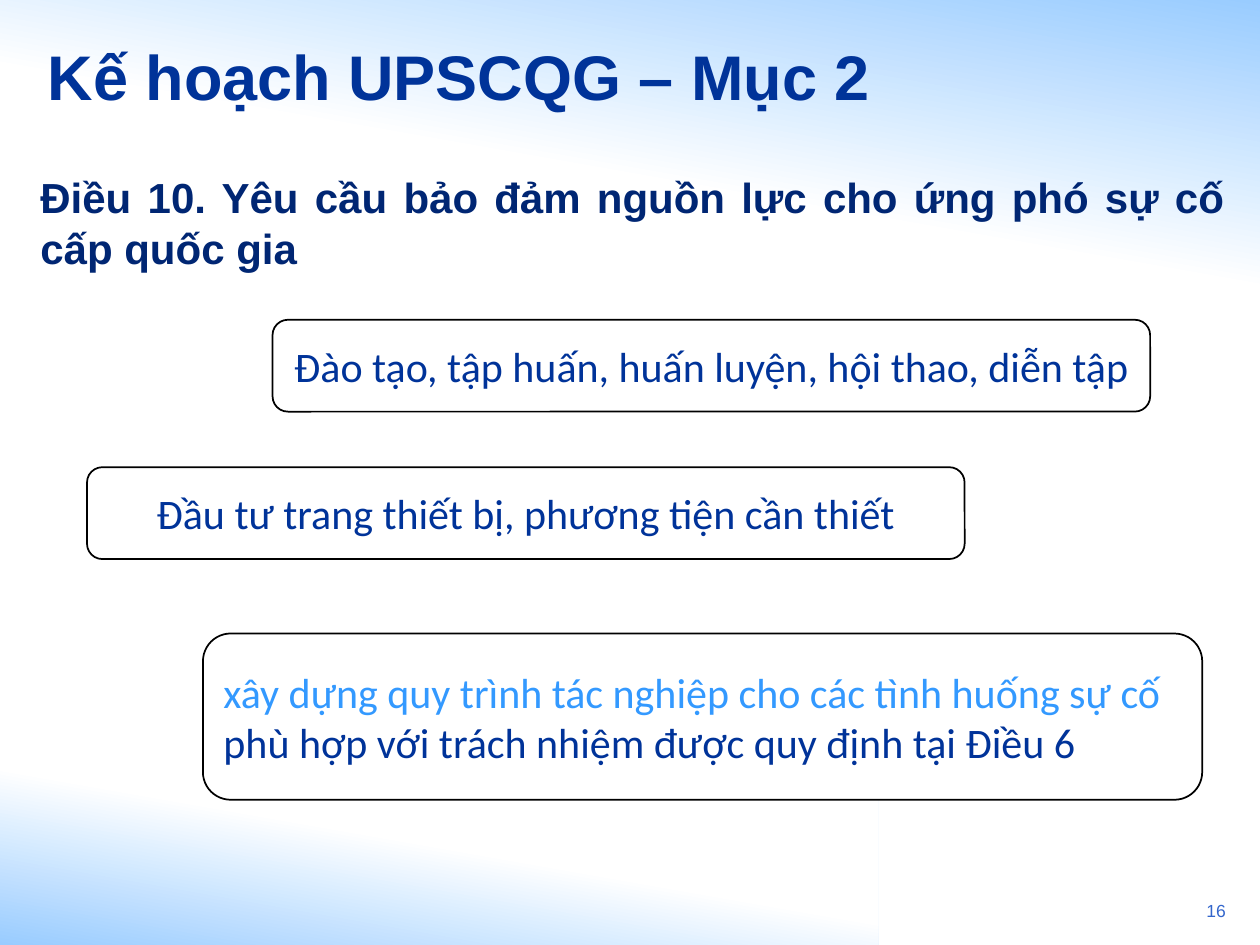
from pptx import Presentation
from pptx.dml.color import RGBColor
from pptx.enum.shapes import MSO_SHAPE
from pptx.enum.text import MSO_ANCHOR, PP_ALIGN
from pptx.util import Pt

COLORS = {
    "sky": "99CCFF", "white": "FFFFFF", "black": "000000", "title": "003399",
    "heading": "002673", "accent": "3399FF", "number": "3366CC",
}


def color(name):
    return RGBColor.from_string(COLORS[name])


def points(box):
    return [Pt(v) for v in box]


def add_run(p, text, size, font, name, bold=False):
    r = p.add_run()
    r.text = text
    r.font.size, r.font.name, r.font.bold = Pt(size), font, bold
    r.font.color.rgb = color(name)


def add_band(slide, box, angle, white_at):
    """Background band fading from sky blue to white."""
    sp = slide.shapes.add_shape(MSO_SHAPE.RECTANGLE, *points(box))
    sp.shadow.inherit = False
    sp.line.fill.background()
    sp.fill.gradient()
    sp.fill.gradient_angle = angle
    stops = zip(sp.fill.gradient_stops, ("sky", "white"), (0, white_at))
    for stop, name, position in stops:
        stop.color.rgb = color(name)
        stop.position = position


def add_title(slide, box, text):
    sp = slide.shapes.title
    sp.left, sp.top, sp.width, sp.height = points(box)
    tf = sp.text_frame
    tf.vertical_anchor = MSO_ANCHOR.MIDDLE
    p = tf.paragraphs[0]
    p.alignment = PP_ALIGN.LEFT
    add_run(p, text, 36, "Arial", "title", True)


def add_text(slide, box, text, size, name, align, bold=False):
    tf = slide.shapes.add_textbox(*points(box)).text_frame
    tf.word_wrap = True
    p = tf.paragraphs[0]
    p.alignment = align
    add_run(p, text, size, "Arial", name, bold)


def add_card(slide, box, lines, align):
    """Rounded card; each line is a text and its colour name."""
    sp = slide.shapes.add_shape(MSO_SHAPE.ROUNDED_RECTANGLE, *points(box))
    sp.shadow.inherit = False
    sp.adjustments[0] = 0.167
    sp.fill.solid()
    sp.fill.fore_color.rgb = color("white")
    sp.line.color.rgb = color("black")
    sp.line.width = Pt(1)
    tf = sp.text_frame
    tf.word_wrap = False
    tf.vertical_anchor = MSO_ANCHOR.MIDDLE
    for i, (text, name) in enumerate(lines):
        p = tf.add_paragraph() if i else tf.paragraphs[0]
        p.alignment = align
        add_run(p, text, 24, "Calibri", name)


def main():
    prs = Presentation()
    prs.slide_width, prs.slide_height = Pt(720), Pt(540)
    slide = prs.slides.add_slide(prs.slide_layouts[5])

    # Background
    add_band(slide, (0, 417.6, 502, 122.4), 80, 0.48)
    add_band(slide, (0, 0, 720, 168), 260, 0.56)
    # The title placeholder comes above the bands
    tree = slide.shapes.title.element.getparent()
    tree.append(slide.shapes.title.element)

    # Title, heading and page number
    add_title(slide, (20, 9.5, 533, 67.5), "Kế hoạch UPSCQG – Mục 2")
    add_text(slide, (16, 94.5, 691, 79),
             "Điều 10. Yêu cầu bảo đảm nguồn lực cho ứng phó sự cố cấp quốc gia",
             24, "heading", PP_ALIGN.JUSTIFY, True)
    add_text(slide, (667.5, 510.5, 40, 23), "16", 10, "number", PP_ALIGN.RIGHT)

    # Requirement cards
    add_card(slide, (155.75, 182.75, 501.5, 52.5),
             [("Đào tạo, tập huấn, huấn luyện, hội thao, diễn tập", "title")],
             PP_ALIGN.CENTER)
    add_card(slide, (49.75, 267, 501.5, 52.5),
             [("Đầu tư trang thiết bị, phương tiện cần thiết", "title")],
             PP_ALIGN.CENTER)
    add_card(slide, (116, 362, 571, 95),
             [("xây dựng quy trình tác nghiệp cho các tình huống sự cố", "accent"),
              ("phù hợp với trách nhiệm được quy định tại Điều 6", "title")],
             PP_ALIGN.LEFT)

    prs.save("out.pptx")


if __name__ == "__main__":
    main()
